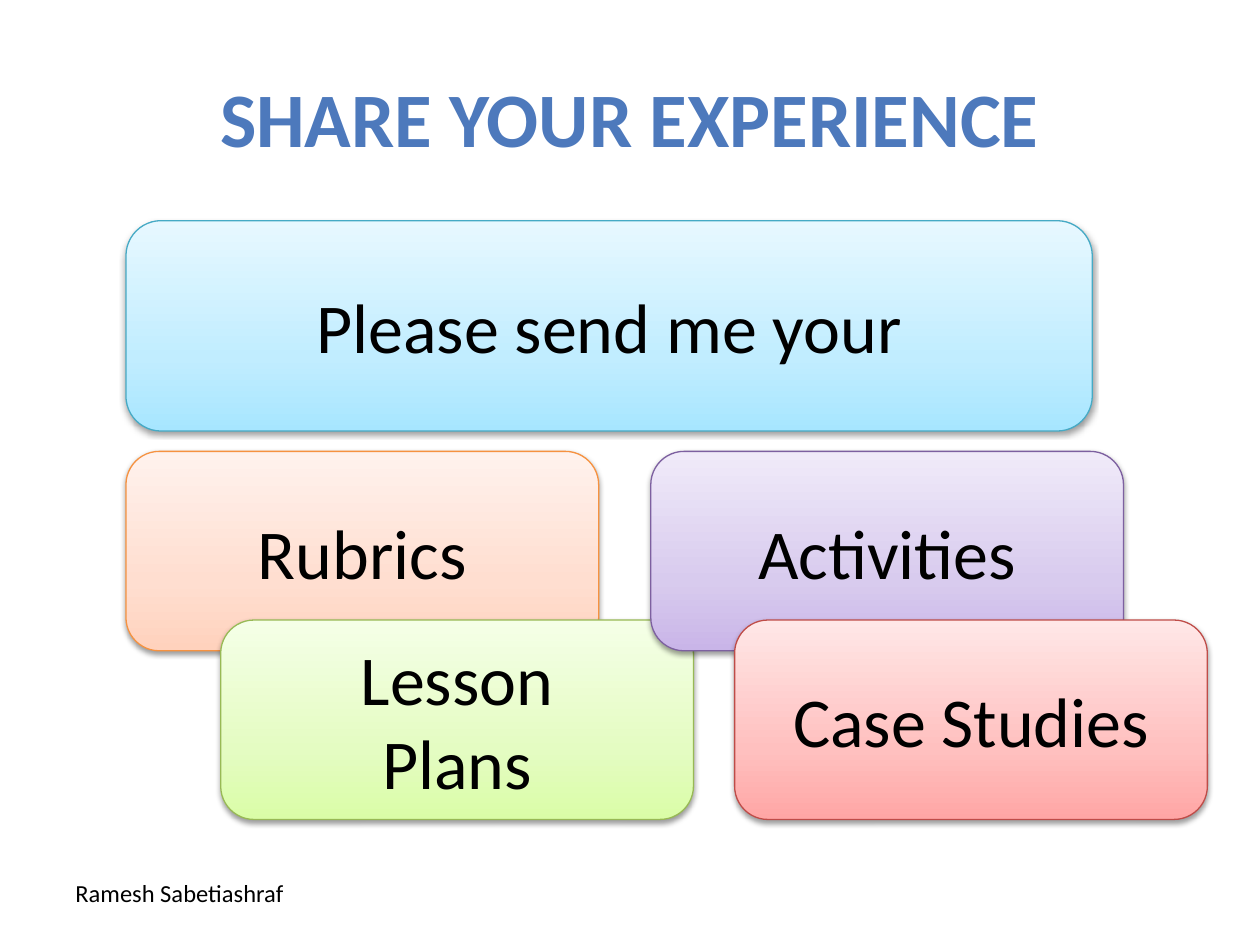
from copy import deepcopy

from lxml.etree import SubElement
from pptx import Presentation
from pptx.dml.color import RGBColor
from pptx.enum.shapes import MSO_SHAPE
from pptx.enum.text import MSO_ANCHOR, PP_ALIGN
from pptx.oxml.ns import qn
from pptx.util import Cm, Pt

INK = {"text": "000000", "title": "4D79BC", "back": "FFFFFF"}
TONES = {
    "blue": ("46AAC5", "A7E6FF", "C1EDFF", "E7F8FF"),
    "orange": ("F69240", "FFD2BD", "FFDED0", "FFF2ED"),
    "green": ("98B955", "DAFDA7", "E4FCC2", "F5FFE7"),
    "purple": ("7D60A0", "C9B5E8", "D8CBEE", "F0EAF9"),
    "red": ("BF4C48", "FFA6A5", "FFC0BF", "FFE7E7"),
}
STOPS = (0, 0.35, 1)


def rgb(code):
    """Turn a hex string into a colour."""
    return RGBColor.from_string(code)


def write(shape, text, size, color, align=PP_ALIGN.CENTER, bold=False):
    """Fill a shape with one paragraph for each line of text."""
    frame = shape.text_frame
    frame.word_wrap = True
    frame.text = text
    for para in frame.paragraphs:
        para.alignment = align
        font = para.font
        font.name, font.size, font.bold = "Calibri", Pt(size), bold
        font.color.rgb = rgb(color)
    return frame


def shade(shape, tones):
    """Give a shape an upward blend of three tones."""
    shape.fill.gradient()
    shape.fill.gradient_angle = 90
    first = shape._element.spPr.find(".//" + qn("a:gs"))
    first.addnext(deepcopy(first))
    for stop, place, tone in zip(shape.fill.gradient_stops, STOPS, tones):
        stop.position = place
        stop.color.rgb = rgb(tone)


def shadow(shape):
    """Drop a soft shadow below a shape."""
    shape.shadow.inherit = False
    effects = shape._element.spPr.find(qn("a:effectLst"))
    outer = SubElement(effects, qn("a:outerShdw"), blurRad="40000",
                       dist="20000", dir="5400000", rotWithShape="0")
    color = SubElement(outer, qn("a:srgbClr"), val=INK["text"])
    SubElement(color, qn("a:alpha"), val="38000")


def card(slide, box, text, tone):
    """Draw a rounded card with centred text."""
    shape = slide.shapes.add_shape(MSO_SHAPE.ROUNDED_RECTANGLE, *map(Cm, box))
    edge, *tones = TONES[tone]
    shade(shape, tones)
    shape.line.color.rgb = rgb(edge)
    shape.line.width = Pt(0.75)
    shadow(shape)
    frame = write(shape, text, 40, INK["text"])
    frame.vertical_anchor = MSO_ANCHOR.MIDDLE


def pair(slide, box, shift, items):
    """Draw overlapping cards, each moved by the shift from the last."""
    left, top, width, height = box
    for step, (text, tone) in enumerate(items):
        place = (left + step * shift, top + step * 3.4, width, height)
        card(slide, place, text, tone)


def title(slide, box, text):
    """Draw the heading on its plain panel."""
    shape = slide.shapes.add_textbox(*map(Cm, box))
    shape.fill.solid()
    shape.fill.fore_color.rgb = rgb(INK["back"])
    frame = write(shape, text, 44, INK["title"], bold=True)
    frame.vertical_anchor = MSO_ANCHOR.MIDDLE


def footer(slide, box, text):
    """Write the name at the foot of the slide."""
    shape = slide.shapes.add_textbox(*map(Cm, box))
    write(shape, text, 14, INK["text"], PP_ALIGN.LEFT)


def main():
    """Build the slide and save it."""
    deck = Presentation()
    deck.slide_width, deck.slide_height = Cm(25.4), Cm(19.05)
    slide = deck.slides.add_slide(deck.slide_layouts[6])
    footer(slide, (1.27, 17.58, 6.99, 1.45), "Ramesh Sabetiashraf")
    title(slide, (1.27, 0.76, 22.86, 3.18), "SHARE YOUR EXPERIENCE")
    card(slide, (2.54, 4.45, 19.48, 4.24), "Please send me your", "blue")
    pair(slide, (2.54, 9.1, 9.53, 4.02), 1.91,
         [("Rubrics", "orange"), ("Lesson\nPlans", "green")])
    pair(slide, (13.12, 9.1, 9.53, 4.02), 1.69,
         [("Activities", "purple"), ("Case Studies", "red")])
    deck.save("out.pptx")


if __name__ == "__main__":
    main()
